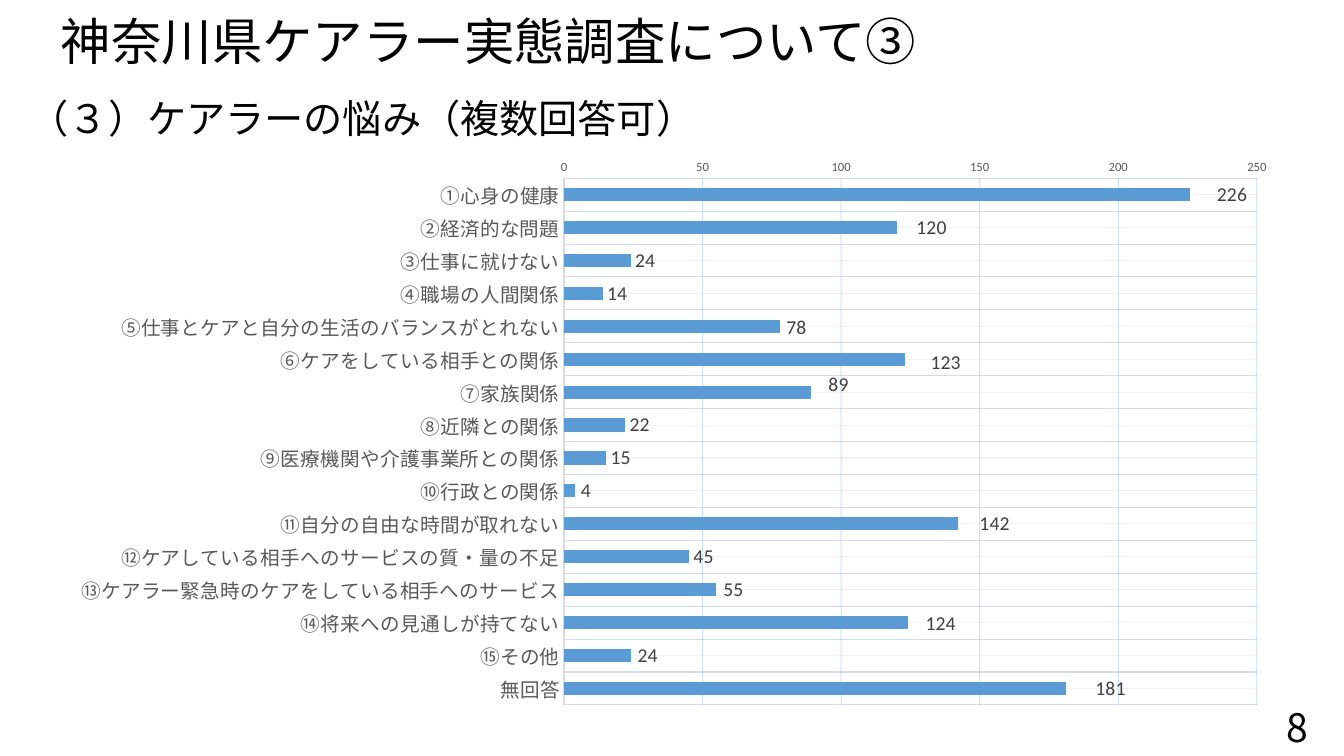
from copy import deepcopy

from lxml import etree
from pptx import Presentation
from pptx.chart.data import CategoryChartData
from pptx.dml.color import RGBColor
from pptx.enum.chart import XL_CHART_TYPE, XL_LABEL_POSITION, XL_TICK_MARK
from pptx.enum.text import MSO_ANCHOR, MSO_AUTO_SIZE, PP_ALIGN
from pptx.oxml.ns import qn
from pptx.util import Pt

PX = 9525
STACKED = XL_CHART_TYPE.BAR_STACKED
CENTER = XL_LABEL_POSITION.CENTER
NO_TICK = XL_TICK_MARK.NONE
FIT = MSO_AUTO_SIZE.SHAPE_TO_FIT_TEXT
TOP, MIDDLE = MSO_ANCHOR.TOP, MSO_ANCHOR.MIDDLE
LEFT, RIGHT = PP_ALIGN.LEFT, PP_ALIGN.RIGHT
LATIN, CJK = "Calibri", "Noto Sans CJK JP"
BLUE = "5B9BD5"
AXIS_MAX = 250
PLOT = {"x": 0.418, "y": 0.119, "w": 0.556, "h": 0.868}

# worry, answers, label centre on the value axis, label shift down
WORRIES = [
    ("①心身の健康", 226, 241, 0),
    ("②経済的な問題", 120, 132.6, 0),
    ("③仕事に就けない", 24, 29.3, 0),
    ("④職場の人間関係", 14, 19.2, 0),
    ("⑤仕事とケアと自分の生活のバランスがとれない", 78, 83.9, 0.003),
    ("⑥ケアをしている相手との関係", 123, 137.7, 0.005),
    ("⑦家族関係", 89, 99.1, -0.013),
    ("⑧近隣との関係", 22, 27.3, 0),
    ("⑨医療機関や介護事業所との関係", 15, 20.5, 0),
    ("⑩行政との関係", 4, 8, 0),
    ("⑪自分の自由な時間が取れない", 142, 155.4, 0),
    ("⑫ケアしている相手へのサービスの質・量の不足", 45, 50.4, 0),
    ("⑬ケアラー緊急時のケアをしている相手へのサービス", 55, 61.2, 0),
    ("⑭将来への見通しが持てない", 124, 135.9, 0.002),
    ("⑮その他", 24, 30.2, 0),
    ("無回答", 181, 197.2, 0),
]


def color(text):
    return RGBColor.from_string(text)


def place(*lengths):
    return [n * PX for n in lengths]


def style(font, size, tint, name=LATIN):
    font.size, font.name = Pt(size), name
    font.color.rgb = color(tint)


def add_text(slide, box, text, size, name, anchor=TOP, align=LEFT):
    shape = slide.shapes.add_textbox(*place(*box))
    frame = shape.text_frame
    frame.word_wrap = True
    frame.vertical_anchor = anchor
    para = frame.paragraphs[0]
    para.text = text
    para.alignment = align
    style(para.font, size, "000000", name)
    props = para._p.pPr.find(qn("a:defRPr"))
    etree.SubElement(props, qn("a:ea"), typeface=CJK)
    return frame


def set_layout(parent, index, values):
    """Give a chart part a manual layout, as fractions of the chart."""
    for old in parent.findall(qn("c:layout")):
        parent.remove(old)
    layout = etree.Element(qn("c:layout"))
    manual = etree.SubElement(layout, qn("c:manualLayout"))
    for key, value in values.items():
        etree.SubElement(manual, qn("c:" + key), val=str(value))
    parent.insert(index, layout)


def set_line(line, tint):
    line.width = Pt(0.75)
    line.color.rgb = color(tint)


def style_axis(axis, size, grid):
    axis.major_tick_mark = axis.minor_tick_mark = NO_TICK
    style(axis.tick_labels.font, size, "595959")
    axis.has_major_gridlines = True
    set_line(axis.major_gridlines.format.line, grid)


def add_minor(axis, tint):
    """Add minor gridlines, styled as the major ones but in another tint."""
    axis.has_minor_gridlines = True
    major = axis._element.find(qn("c:majorGridlines"))
    minor = axis._element.find(qn("c:minorGridlines"))
    minor.append(deepcopy(major.find(qn("c:spPr"))))
    for node in minor.iter(qn("a:srgbClr")):
        node.set("val", tint)


def fade_grid(axis, alpha):
    grid = axis._element.find(qn("c:majorGridlines"))
    for node in grid.iter(qn("a:srgbClr")):
        etree.SubElement(node, qn("a:alpha"), val=str(alpha * 1000))


def add_labels(series):
    labels = series.data_labels
    labels.show_value = True
    labels.position = CENTER
    style(labels.font, 14, "404040")
    for i in range(len(WORRIES)):
        label = series.points[i].data_label
        label.position = CENTER
        style(label.font, 14, "404040")
    root = labels._element
    for lead in root.findall(qn("c:showLeaderLines")):
        lead.set("val", "0")
    for node, (_, count, mid, down) in zip(root.findall(qn("c:dLbl")), WORRIES):
        shift = (mid - count / 2) / AXIS_MAX * PLOT["w"]
        set_layout(node, 1, {"x": round(shift, 4), "y": down})


def add_bars(slide, box):
    data = CategoryChartData()
    data.categories = [row[0] for row in WORRIES]
    data.add_series("Series 1", [row[1] for row in WORRIES])
    chart = slide.shapes.add_chart(STACKED, *place(*box), data).chart
    chart.has_legend = chart.has_title = False
    style(chart.font, 10, "000000")

    cats = chart.category_axis
    style_axis(cats, 14, "D6DCE5")
    cats.reverse_order = True
    set_line(cats.format.line, "D9D9D9")
    add_minor(cats, "F2F2F2")

    vals = chart.value_axis
    style_axis(vals, 9, BLUE)
    fade_grid(vals, 31)
    vals.minimum_scale, vals.maximum_scale, vals.major_unit = 0, AXIS_MAX, 50
    vals.format.line.fill.background()

    plot = chart.plots[0]
    plot.gap_width, plot.overlap, plot.vary_by_categories = 150, 100, False
    series = plot.series[0]
    series.format.fill.solid()
    series.format.fill.fore_color.rgb = color(BLUE)
    add_labels(series)
    area = chart._chartSpace.find(qn("c:chart")).find(qn("c:plotArea"))
    frame = {"layoutTarget": "inner", "xMode": "edge", "yMode": "edge"}
    set_layout(area, 0, frame | PLOT)


def main():
    deck = Presentation()
    deck.slide_width, deck.slide_height = place(1280, 720)
    slide = deck.slides.add_slide(deck.slide_layouts[6])
    head = add_text(slide, (19, 85, 699, 55), "（３）ケアラーの悩み（複数回答可）",
                    28, LATIN)
    head.auto_size = FIT
    title = add_text(slide, (0, 0, 917, 85), "神奈川県ケアラー実態調査について③",
                     36, CJK, MIDDLE)
    title.margin_left = 58 * PX
    title.paragraphs[0].line_spacing = 0.9
    add_bars(slide, (41, 101, 1187, 578))
    add_text(slide, (967, 673, 288, 38), "8", 28, CJK, MIDDLE, RIGHT)
    deck.save("out.pptx")


if __name__ == "__main__":
    main()
